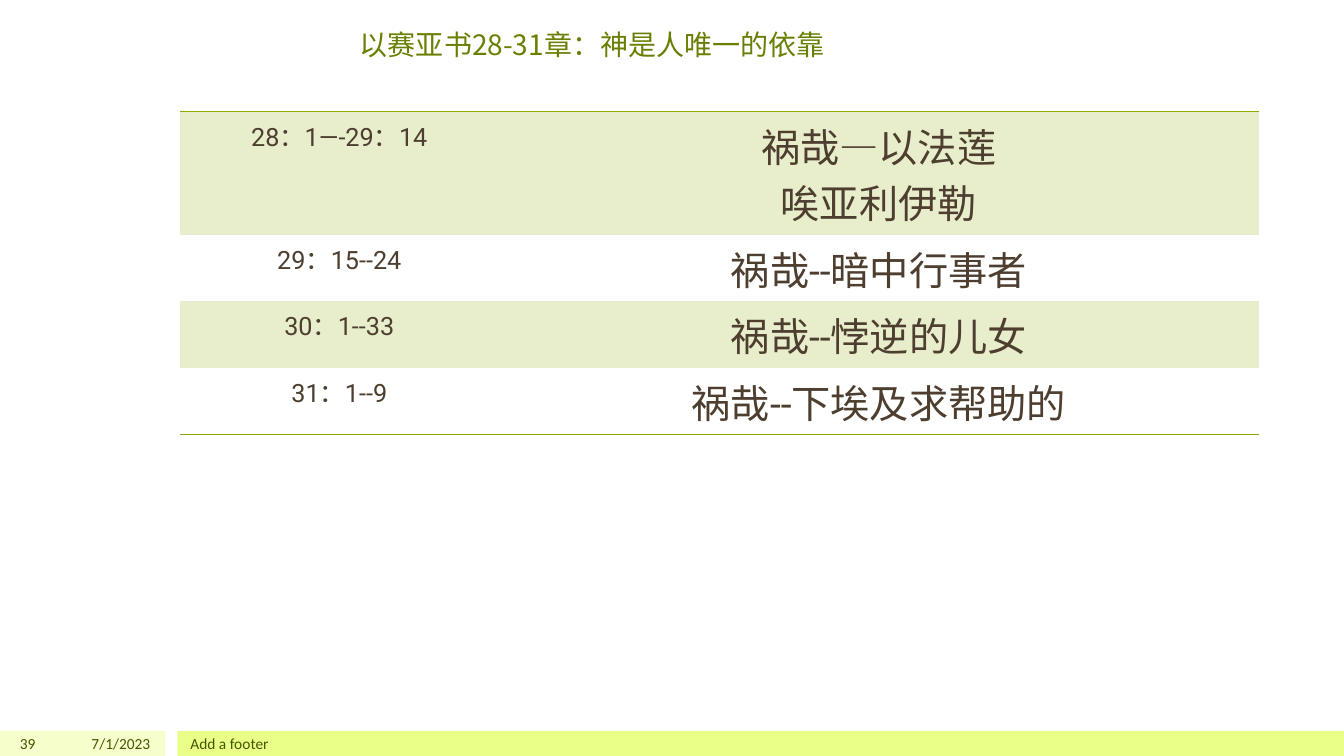
from dataclasses import dataclass

from lxml.etree import SubElement
from pptx import Presentation
from pptx.dml.color import RGBColor
from pptx.enum.shapes import MSO_SHAPE as Preset
from pptx.enum.text import MSO_ANCHOR as Anchor, PP_ALIGN as Align
from pptx.oxml import parse_xml
from pptx.oxml.ns import nsdecls, qn
from pptx.util import Inches, Pt


@dataclass(frozen=True)
class Theme:
    title: str = "688000"
    body: str = "4D3E2F"
    footer: str = "455500"
    band: str = "E8EECC"
    rule: str = "8BAA00"
    pale_bar: str = "F6FFCC"
    bright_bar: str = "E9FF88"
    chinese_font: str = "Noto Sans CJK SC"
    table_font: str = "Roboto"
    footer_font: str = "Calibri"
    title_size: int = 20
    verse_size: int = 18
    topic_size: int = 28
    footer_size: int = 11
    plain_table: str = "{2D5ABB26-0587-4C30-8999-92F81FD0307C}"


def write_text(frame, text, *, font, east_font, size, color, align=Align.LEFT):
    frame.text = text
    for paragraph in frame.paragraphs:
        paragraph.alignment = align
        for run in paragraph.runs:
            run.font.name = font
            run.font.size = Pt(size)
            run.font.color.rgb = RGBColor.from_string(color)
            SubElement(run.font._element, qn("a:ea"), typeface=east_font)


class SlideBuilder:
    def __init__(self, slide, theme):
        self.slide = slide
        self.theme = theme

    def bar(self, left, top, width, height, color):
        shape = self.slide.shapes.add_shape(
            Preset.RECTANGLE, Inches(left), Inches(top), Inches(width), Inches(height))
        shape.shadow.inherit = False
        shape.fill.solid()
        shape.fill.fore_color.rgb = RGBColor.from_string(color)
        shape.line.fill.background()

    def text(self, left, top, width, height, text, anchor=Anchor.MIDDLE, **style):
        box = self.slide.shapes.add_textbox(
            Inches(left), Inches(top), Inches(width), Inches(height))
        frame = box.text_frame
        frame.word_wrap = True
        frame.vertical_anchor = anchor
        write_text(frame, text, east_font=self.theme.chinese_font, **style)

    def rule(self, cell, side):
        cell._tc.get_or_add_tcPr().insert(0, parse_xml(
            f'<a:{side} {nsdecls("a")} w="{Pt(1)}"><a:solidFill>'
            f'<a:srgbClr val="{self.theme.rule}"/></a:solidFill></a:{side}>'))

    def table(self, left, top, widths, heights, rows):
        theme = self.theme
        table = self.slide.shapes.add_table(
            len(rows), len(widths), Inches(left), Inches(top),
            Inches(sum(widths)), Inches(sum(heights))).table
        table.first_row = False
        table.horz_banding = False
        table._tbl.tblPr.find(qn("a:tableStyleId")).text = theme.plain_table
        for column, width in zip(table.columns, widths):
            column.width = Inches(width)
        sizes = (theme.verse_size, theme.topic_size)
        for index, (row, height, texts) in enumerate(zip(table.rows, heights, rows)):
            row.height = Inches(height)
            for cell, text, size in zip(row.cells, texts, sizes):
                write_text(cell.text_frame, text, font=theme.table_font,
                           east_font=theme.chinese_font, size=size,
                           color=theme.body, align=Align.CENTER)
                if index % 2 == 0:
                    cell.fill.solid()
                    cell.fill.fore_color.rgb = RGBColor.from_string(theme.band)
                else:
                    cell.fill.background()
                if index == 0:
                    self.rule(cell, "lnT")
                if index == len(rows) - 1:
                    self.rule(cell, "lnB")


def main():
    presentation = Presentation()
    presentation.slide_width = Inches(13.33)
    presentation.slide_height = Inches(7.5)
    theme = Theme()
    builder = SlideBuilder(
        presentation.slides.add_slide(presentation.slide_layouts[6]), theme)

    footer_top, footer_height = 7.25, 0.25
    builder.bar(0, footer_top, 1.64, footer_height, theme.pale_bar)
    builder.bar(1.76, footer_top, 11.57, footer_height, theme.bright_bar)

    builder.text(0.72, 0.08, 10.31, 0.58, "以赛亚书28-31章：神是人唯一的依靠",
                 anchor=Anchor.BOTTOM, font=theme.chinese_font,
                 size=theme.title_size, color=theme.title, align=Align.CENTER)

    footers = (
        (0, 0.45, "39", Align.RIGHT),
        (0.5, 1.09, "7/1/2023", Align.RIGHT),
        (1.79, 10, "Add a footer", Align.LEFT),
    )
    for left, width, text, align in footers:
        builder.text(left, footer_top, width, footer_height, text,
                     font=theme.footer_font, size=theme.footer_size,
                     color=theme.footer, align=align)

    builder.table(1.79, 1.11, (3.15, 7.55), (1.22, 0.66, 0.66, 0.66), (
        ("28：1—-29：14", "祸哉—以法莲\n唉亚利伊勒"),
        ("29：15--24", "祸哉--暗中行事者"),
        ("30：1--33", "祸哉--悖逆的儿女"),
        ("31：1--9", "祸哉--下埃及求帮助的"),
    ))
    presentation.save("out.pptx")


if __name__ == "__main__":
    main()
